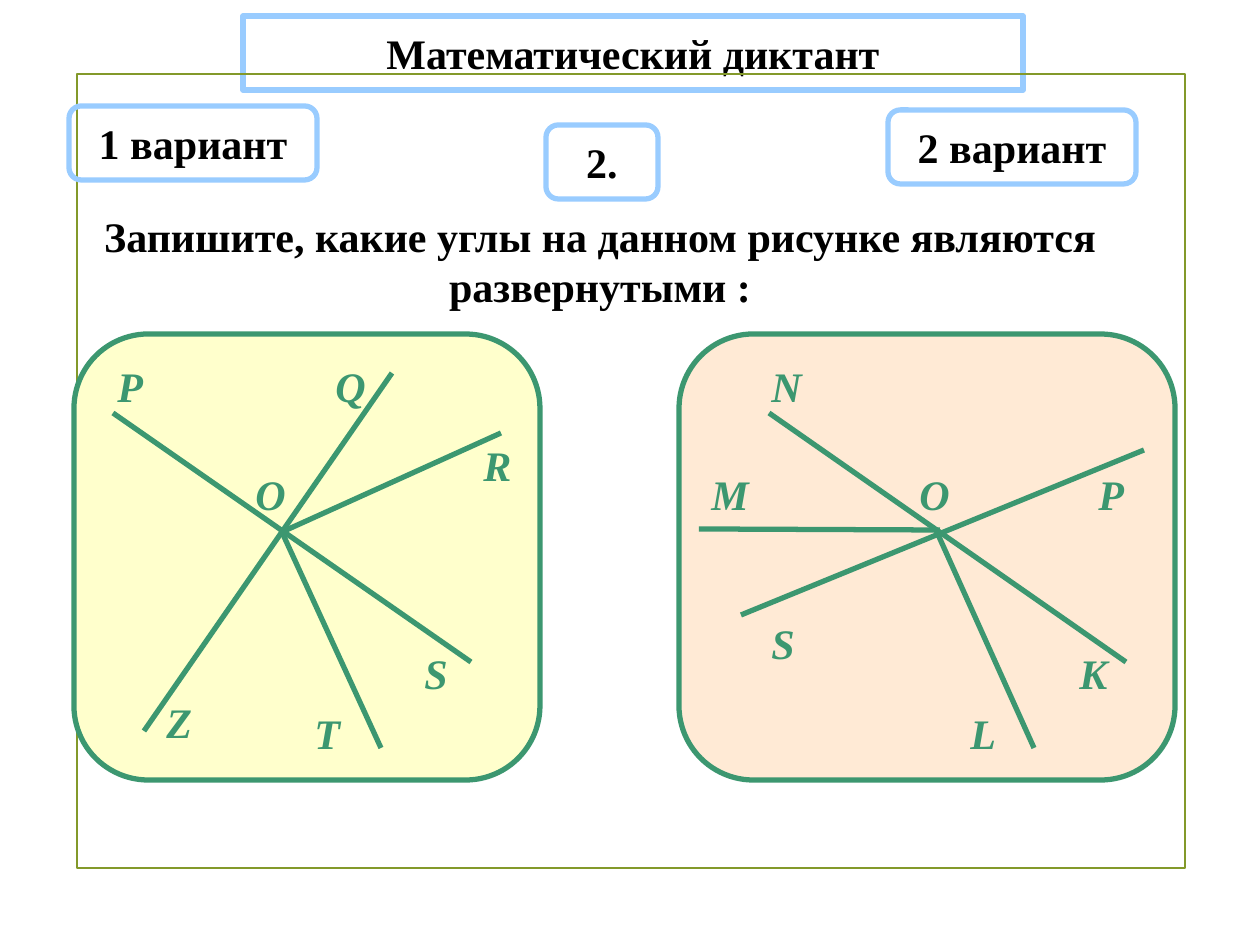
from lxml.etree import SubElement
from pptx import Presentation
from pptx.dml.color import RGBColor
from pptx.enum.shapes import MSO_CONNECTOR as Connector, MSO_SHAPE as Shape
from pptx.enum.text import MSO_ANCHOR as Anchor, MSO_AUTO_SIZE as AutoSize, PP_ALIGN as Align
from pptx.oxml.ns import qn
from pptx.util import Emu, Pt

BLACK = RGBColor(0x00, 0x00, 0x00)
OLIVE = RGBColor(0x83, 0x99, 0x2A)
BLUE = RGBColor(0x99, 0xCC, 0xFF)
GREEN = RGBColor(0x3C, 0x97, 0x70)
YELLOW = RGBColor(0xFF, 0xFF, 0xCC)
PEACH = RGBColor(0xFF, 0xEA, 0xD5)

LABEL_WIDTH, LABEL_HEIGHT = 79, 63
CENTER_WIDTH = 30
PANEL_TOP, PANEL_HEIGHT = 334, 446
BADGE_HEIGHT = 74

BADGES = [
    ("1 вариант", 69, 106, 248),
    ("2 вариант", 888, 110, 248),
    ("2.", 546, 125, 112),
]
PANELS = [
    {
        "left": 74, "width": 466, "fill": YELLOW,
        "rays": [(113, 413, 471, 662), (392, 373, 144, 731),
                 (282, 532, 501, 433), (381, 748, 281, 530)],
        "labels": [("O", 243, 462), ("P", 105, 354), ("Q", 323, 354), ("R", 471, 433),
                   ("S", 412, 641), ("T", 302, 701), ("Z", 154, 690)],
    },
    {
        "left": 679, "width": 496, "fill": PEACH,
        "rays": [(769, 413, 1126, 662), (1144, 450, 741, 615),
                 (1034, 748, 936, 530), (940, 530, 699, 529)],
        "labels": [("O", 907, 462), ("N", 759, 354), ("M", 699, 462), ("P", 1086, 462),
                   ("K", 1067, 641), ("L", 958, 701), ("S", 759, 611)],
    },
]


def px(*lengths):
    return [Emu(round(length * 914400 / 126)) for length in lengths]


class Board:
    font_name = "Times New Roman"
    font_size = Pt(24)

    def __init__(self, slide):
        self.slide = slide

    def add_text(self, shape, text, color=BLACK, align=Align.CENTER, anchor=Anchor.TOP, italic=False):
        frame = shape.text_frame
        frame.word_wrap = True
        frame.auto_size = AutoSize.NONE
        frame.vertical_anchor = anchor
        paragraph = frame.paragraphs[0]
        paragraph.alignment = align
        run = paragraph.add_run()
        run.text = text
        font = run.font
        font.name, font.size, font.bold, font.italic = self.font_name, self.font_size, True, italic
        font.color.rgb = color

    def outline(self, shape, color, width, fill=None):
        if fill is None:
            shape.fill.background()
        else:
            shape.fill.solid()
            shape.fill.fore_color.rgb = fill
        shape.line.color.rgb = color
        shape.line.width = Pt(width)

    def box(self, kind, bounds, color, width=3, fill=None):
        shape = self.slide.shapes.add_shape(kind, *px(*bounds))
        shape.shadow.inherit = False
        self.outline(shape, color, width, fill)
        return shape

    def title(self, text, bounds):
        shape = self.slide.shapes.title
        shape.left, shape.top, shape.width, shape.height = px(*bounds)
        geometry = SubElement(shape.element.spPr, qn("a:prstGeom"), prst="roundRect")
        SubElement(geometry, qn("a:avLst"))
        self.outline(shape, BLUE, 3)
        self.add_text(shape, text, anchor=Anchor.MIDDLE)

    def badge(self, text, left, top, width):
        shape = self.box(Shape.ROUNDED_RECTANGLE, (left, top, width, BADGE_HEIGHT), BLUE)
        self.add_text(shape, text, anchor=Anchor.MIDDLE)

    def text(self, text, bounds, **style):
        self.add_text(self.slide.shapes.add_textbox(*px(*bounds)), text, **style)

    def ray(self, *ends):
        line = self.slide.shapes.add_connector(Connector.STRAIGHT, *px(*ends))
        line.line.color.rgb = GREEN
        line.line.width = Pt(3)
        SubElement(line.element.spPr, qn("a:effectLst"))

    def panel(self, left, width, fill, rays, labels):
        self.box(Shape.ROUNDED_RECTANGLE, (left, PANEL_TOP, width, PANEL_HEIGHT), GREEN, fill=fill)
        for ray in rays:
            self.ray(*ray)
        for letter, x, y in labels:
            label_width = CENTER_WIDTH if letter == "O" else LABEL_WIDTH
            self.text(letter, (x, y, label_width, LABEL_HEIGHT),
                      color=GREEN, align=Align.LEFT, italic=True)


def main():
    presentation = Presentation()
    presentation.slide_width, presentation.slide_height = px(1260, 945)
    board = Board(presentation.slides.add_slide(presentation.slide_layouts[5]))
    board.box(Shape.RECTANGLE, (77, 74, 1108, 794), OLIVE, width=1.25)
    board.title("Математический диктант", (243, 16, 780, BADGE_HEIGHT))
    for badge in BADGES:
        board.badge(*badge)
    board.text("Запишите, какие углы на данном рисунке являются развернутыми :",
               (74, 204, 1052, 113))
    for panel in PANELS:
        board.panel(**panel)
    presentation.save("out.pptx")


if __name__ == "__main__":
    main()
